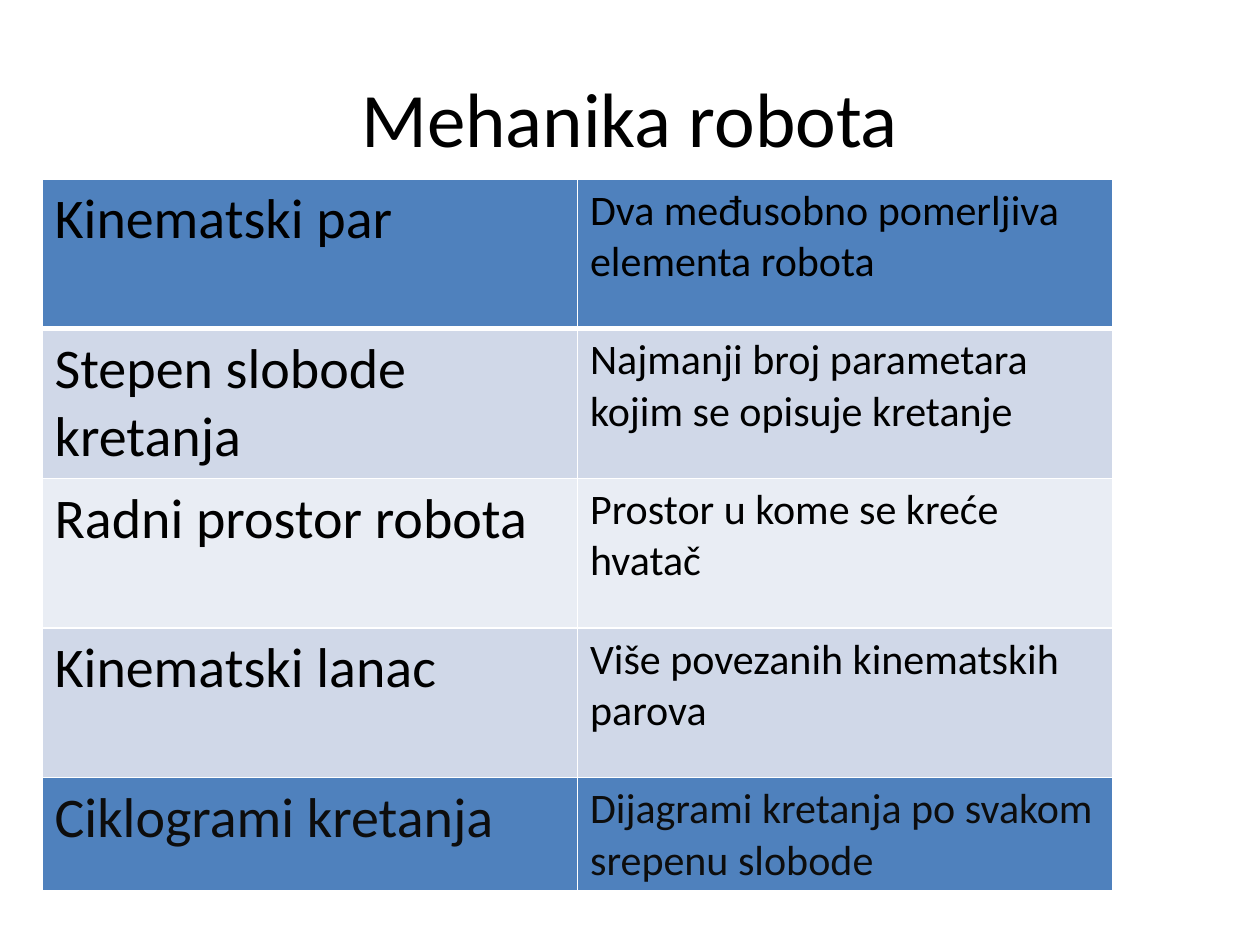
from lxml.etree import SubElement
from pptx import Presentation
from pptx.dml.color import RGBColor
from pptx.enum.text import MSO_ANCHOR as Anchor, PP_ALIGN as Align
from pptx.oxml.ns import qn
from pptx.util import Pt

BLUE, PALE, LIGHT = "4F81BD", "D0D8E8", "E9EDF4"
BLACK, CHARCOAL, WHITE = "000000", "0D0D0D", "FFFFFF"

TERMS = [
    ("Kinematski par", "Dva međusobno pomerljiva elementa robota"),
    ("Stepen slobode kretanja", "Najmanji broj parametara kojim se opisuje kretanje"),
    ("Radni prostor robota", "Prostor u kome se kreće hvatač"),
    ("Kinematski lanac", "Više povezanih kinematskih parova"),
]
CYCLE_TERMS = [
    ("Ciklogrami kretanja", "Dijagrami kretanja po svakom srepenu slobode"),
]


def color(value):
    return RGBColor.from_string(value)


def write(frame, text, *, size, ink=BLACK, font="Calibri", align=Align.LEFT):
    para = frame.paragraphs[0]
    para.alignment = align
    span = para.add_run()
    span.text = text
    span.font.name = font
    span.font.size = Pt(size)
    span.font.bold = False
    span.font.color.rgb = color(ink)


def add_borders(cell, bottom):
    properties = cell._tc.get_or_add_tcPr()
    for side, width in (("L", 1), ("R", 1), ("T", 1), ("B", bottom)):
        line = SubElement(properties, qn(f"a:ln{side}"), w=str(Pt(width)))
        fill = SubElement(line, qn("a:solidFill"))
        SubElement(fill, qn("a:srgbClr"), val=WHITE)


class SlideBuilder:
    column_sizes = (32, 24)
    column_width = 306
    table_left = 24

    def __init__(self, deck):
        self.page = deck.slides.add_slide(deck.slide_layouts[5])

    def title(self, text, left, top, width, height):
        box = self.page.shapes.title
        box.left, box.top = Pt(left), Pt(top)
        box.width, box.height = Pt(width), Pt(height)
        box.text_frame.vertical_anchor = Anchor.MIDDLE
        write(box.text_frame, text, size=44, align=Align.CENTER)

    def table(self, rows, top, row_height, fills, ink=BLACK):
        columns = len(self.column_sizes)
        frame = self.page.shapes.add_table(
            len(rows), columns, Pt(self.table_left), Pt(top),
            Pt(columns * self.column_width), Pt(len(rows) * row_height))
        table = frame.table
        table.first_row = table.horz_banding = False
        for column in table.columns:
            column.width = Pt(self.column_width)
        for row, texts, fill in zip(table.rows, rows, fills):
            row.height = Pt(row_height)
            for cell, text, size in zip(row.cells, texts, self.column_sizes):
                add_borders(cell, bottom=3 if fill == BLUE else 1)
                cell.fill.solid()
                cell.fill.fore_color.rgb = color(fill)
                write(cell.text_frame, text, size=size, ink=ink)


def main():
    deck = Presentation()
    deck.slide_width, deck.slide_height = Pt(720), Pt(540)
    slide = SlideBuilder(deck)
    slide.title("Mehanika robota", 36, 21.6, 648, 90)
    slide.table(TERMS, 102.4, 85.5, (BLUE, PALE, LIGHT, PALE))
    slide.table(CYCLE_TERMS, 444.4, 64.8, (BLUE,), ink=CHARCOAL)
    deck.save("out.pptx")


if __name__ == "__main__":
    main()
